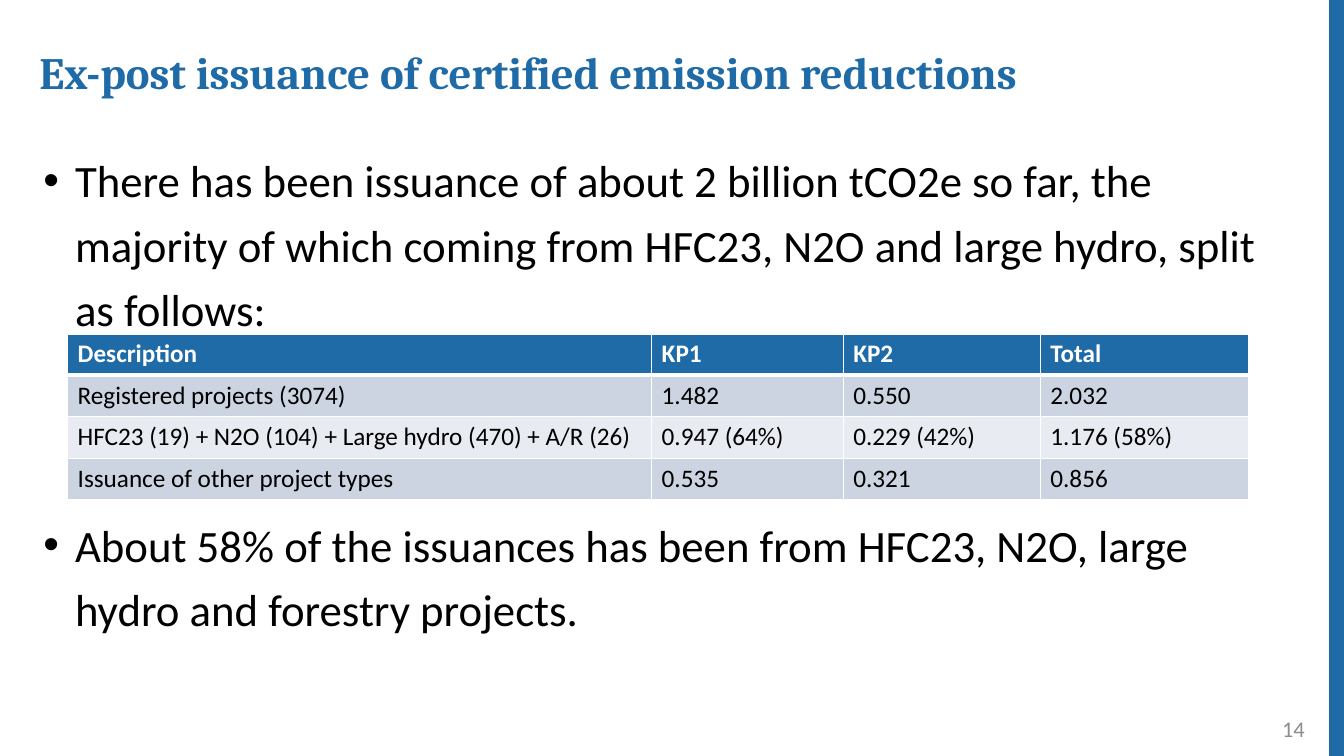
from lxml.etree import SubElement
from pptx import Presentation
from pptx.dml.color import RGBColor
from pptx.enum.shapes import MSO_CONNECTOR
from pptx.enum.text import MSO_ANCHOR, PP_ALIGN
from pptx.oxml.ns import qn
from pptx.util import Pt

BLUE = RGBColor(0x1F, 0x6B, 0xA7)
WHITE = RGBColor(0xFF, 0xFF, 0xFF)
BLACK = RGBColor(0, 0, 0)
GREY = RGBColor(0x8C, 0x8C, 0x8C)
BAND_DARK = RGBColor(0xCD, 0xD4, 0xE1)
BAND_LIGHT = RGBColor(0xE8, 0xEB, 0xF1)


def add_text_box(left, top, width, height):
    frame = slide.shapes.add_textbox(Pt(left), Pt(top), Pt(width), Pt(height)).text_frame
    frame.word_wrap = True
    return frame


def set_font(paragraph, name, size, color, bold=False):
    paragraph.font.name = name
    paragraph.font.size = Pt(size)
    paragraph.font.bold = bold
    paragraph.font.color.rgb = color


presentation = Presentation()
presentation.slide_width = Pt(960)
presentation.slide_height = Pt(540)
slide = presentation.slides.add_slide(presentation.slide_layouts[6])

side_bar = slide.shapes.add_connector(MSO_CONNECTOR.STRAIGHT, Pt(955.4), Pt(0), Pt(955.4), Pt(540))
side_bar.line.color.rgb = BLUE
side_bar.line.width = Pt(12)
SubElement(side_bar._element.spPr, qn("a:effectLst"))

bullets = [
    ("There has been issuance of about 2 billion tCO2e so far, the majority of which "
     "coming from HFC23, N2O and large hydro, split as follows:", 0),
    ("About 58% of the issuances has been from HFC23, N2O, large hydro and forestry projects.", 122),
]
body = add_text_box(24, 98, 914.4, 412)
for index, (text, space_before) in enumerate(bullets):
    paragraph = body.add_paragraph() if index else body.paragraphs[0]
    paragraph.text = text
    paragraph.line_spacing = 1.2
    paragraph.space_before = Pt(space_before)
    properties = paragraph._p.get_or_add_pPr()
    properties.set("marL", str(Pt(22.5)))
    properties.set("indent", str(Pt(-22.5)))
    SubElement(properties, qn("a:buFont"), typeface="Arial")
    SubElement(properties, qn("a:buChar"), char="•")
    set_font(paragraph, "Calibri", 32, BLACK)

title = add_text_box(21, 33, 861, 42).paragraphs[0]
title.text = "Ex-post issuance of certified emission reductions"
title.line_spacing = 0.9
set_font(title, "Cambria", 32, BLUE, bold=True)

number_frame = add_text_box(723, 506, 216, 29)
number_frame.vertical_anchor = MSO_ANCHOR.MIDDLE
page_number = number_frame.paragraphs[0]
page_number.text = "14"
page_number.alignment = PP_ALIGN.RIGHT
set_font(page_number, "Calibri", 16, GREY)

rows = [
    ["Description", "KP1", "KP2", "Total"],
    ["Registered projects (3074)", "1.482", "0.550", "2.032"],
    ["HFC23 (19) + N2O (104) + Large hydro (470) + A/R (26)", "0.947 (64%)", "0.229 (42%)", "1.176 (58%)"],
    ["Issuance of other project types", "0.535", "0.321", "0.856"],
]
column_widths = [417.2, 136.8, 140.8, 148.6]
row_height = 29.6
table = slide.shapes.add_table(
    len(rows), len(column_widths), Pt(48.3), Pt(238.5),
    Pt(sum(column_widths)), Pt(row_height * len(rows))).table
for column, width in zip(table.columns, column_widths):
    column.width = Pt(width)

for row_index, values in enumerate(rows):
    table.rows[row_index].height = Pt(row_height)
    is_header = row_index == 0
    fill_color = BLUE if is_header else (BAND_LIGHT, BAND_DARK)[row_index % 2]
    border_widths = {
        "a:lnL": 1,
        "a:lnR": 1,
        "a:lnT": 3 if row_index == 1 else 1,
        "a:lnB": 3 if is_header else 1,
    }
    for column_index, value in enumerate(values):
        cell = table.cell(row_index, column_index)
        cell_properties = cell._tc.get_or_add_tcPr()
        for tag, width in border_widths.items():
            border = SubElement(cell_properties, qn(tag), w=str(Pt(width)))
            border_fill = SubElement(border, qn("a:solidFill"))
            SubElement(border_fill, qn("a:srgbClr"), val=str(WHITE))
        cell.fill.solid()
        cell.fill.fore_color.rgb = fill_color
        cell.text = value
        set_font(cell.text_frame.paragraphs[0], "Calibri", 18, WHITE if is_header else BLACK, bold=is_header)

presentation.save("out.pptx")
